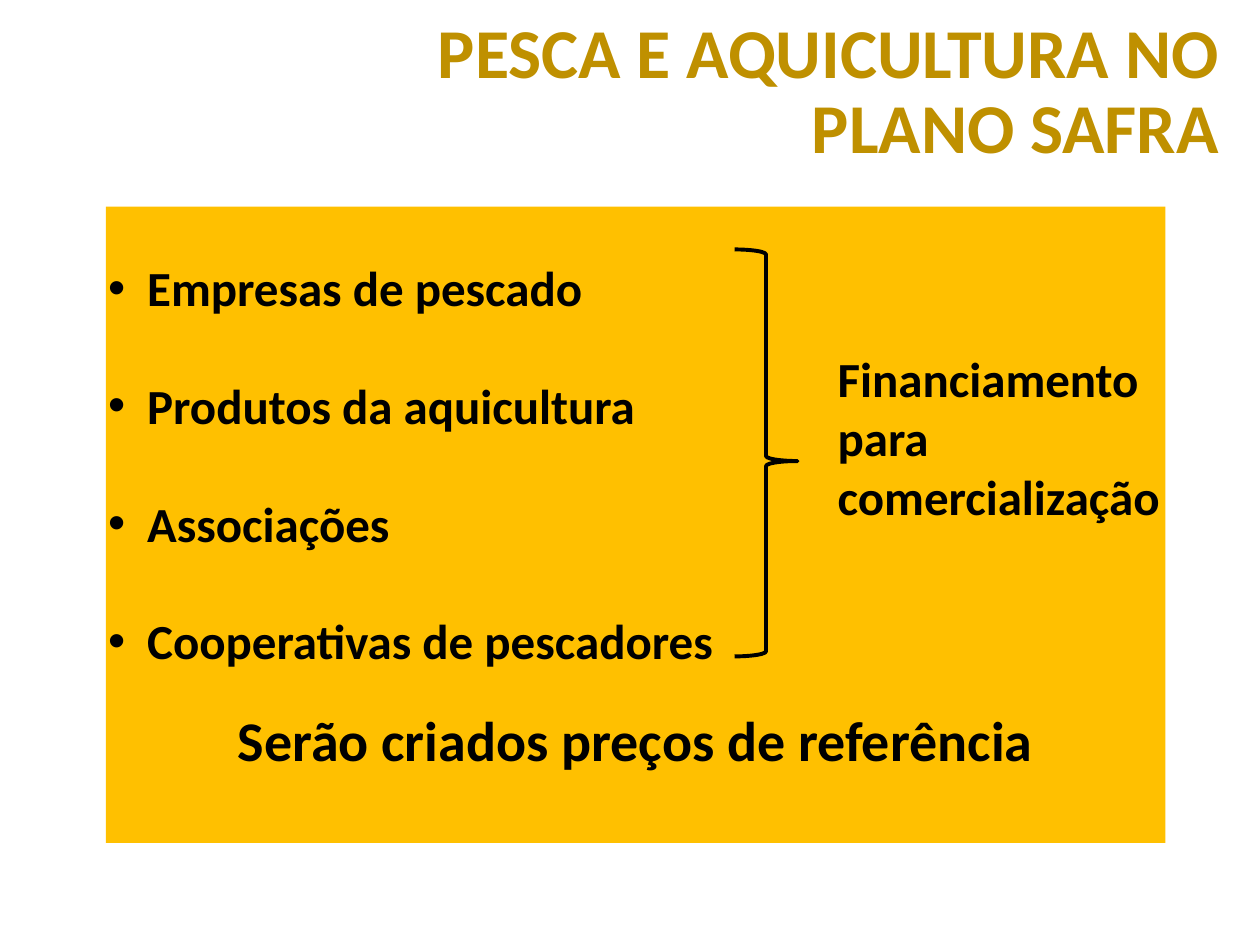
from pptx import Presentation
from pptx.dml.color import RGBColor
from pptx.enum.shapes import MSO_SHAPE
from pptx.enum.text import MSO_ANCHOR, PP_ALIGN
from pptx.oxml.ns import qn
from pptx.util import Inches, Pt
from lxml import etree

AMBER = RGBColor(0xFF, 0xC0, 0x00)
GOLD = RGBColor(0xBF, 0x90, 0x00)
BLACK = RGBColor(0, 0, 0)
RECT, BRACE = MSO_SHAPE.RECTANGLE, MSO_SHAPE.RIGHT_BRACE
TOP, MIDDLE = MSO_ANCHOR.TOP, MSO_ANCHOR.MIDDLE
LEFT, CENTER, RIGHT = PP_ALIGN.LEFT, PP_ALIGN.CENTER, PP_ALIGN.RIGHT

CELL = Inches(0.1)  # grid of 100 columns by 75 rows
COLS, ROWS = 100, 75
INDENT = Inches(0.31)


class Deck:
    font = "Calibri"

    def __init__(self):
        self.prs = Presentation()
        self.prs.slide_width = COLS * CELL
        self.prs.slide_height = ROWS * CELL
        self.slide = self.prs.slides.add_slide(self.prs.slide_layouts[6])

    def place(self, *cells):
        return [round(n * CELL) for n in cells]

    def shape(self, kind, x, y, w, h):
        item = self.slide.shapes.add_shape(kind, *self.place(x, y, w, h))
        item.shadow.inherit = False
        return item

    def panel(self, x, y, w, h, color):
        box = self.shape(RECT, x, y, w, h)
        box.fill.solid()
        box.fill.fore_color.rgb = color
        box.line.fill.background()

    def brace(self, x, y, w, h, curve, tip):
        mark = self.shape(BRACE, x, y, w, h)
        mark.adjustments[0] = curve
        mark.adjustments[1] = tip
        mark.fill.background()
        mark.line.color.rgb = BLACK
        mark.line.width = Pt(2.25)

    def bullet(self, para):
        props = para._p.get_or_add_pPr()
        props.set("marL", str(INDENT))
        props.set("indent", str(-INDENT))
        etree.SubElement(props, qn("a:buFont"), typeface="Arial")
        etree.SubElement(props, qn("a:buChar"), char="•")

    def text(self, x, y, w, h, lines, size=28, color=BLACK,
             align=LEFT, anchor=TOP, space=1.0, bullets=False):
        box = self.slide.shapes.add_textbox(*self.place(x, y, w, h))
        frame = box.text_frame
        frame.word_wrap = True
        frame.vertical_anchor = anchor
        frame.text = "\n".join(lines)
        for para in frame.paragraphs:
            if bullets:
                self.bullet(para)
            para.alignment = align
            para.line_spacing = space
            font = para.font
            font.name, font.size, font.bold = self.font, Pt(size), True
            font.color.rgb = color


def main():
    deck = Deck()

    # Amber panel with its closing line
    deck.panel(8.4, 16.4, 84.1, 50.5, AMBER)
    deck.text(8.4, 55, 84.1, 8, ["Serão criados preços de referência"],
              size=32, align=CENTER, anchor=MIDDLE, space=0.9)

    # Title
    deck.text(22.9, 4.1, 74.8, 6.6, ["PESCA E AQUICULTURA NO PLANO SAFRA"],
              size=40, color=GOLD, align=RIGHT, anchor=MIDDLE, space=0.9)

    # Groups on the left, joined by a brace to their financing
    deck.brace(58.3, 19.8, 5, 32.3, 0.08, 0.52)
    deck.text(65.5, 27.2, 27.9, 15.1, ["Financiamento para comercialização"])
    deck.text(7.6, 15.3, 51.5, 37.4,
              ["Empresas de pescado", "Produtos da aquicultura",
               "Associações", "Cooperativas de pescadores"],
              space=2.0, bullets=True)

    deck.prs.save("out.pptx")


if __name__ == "__main__":
    main()
